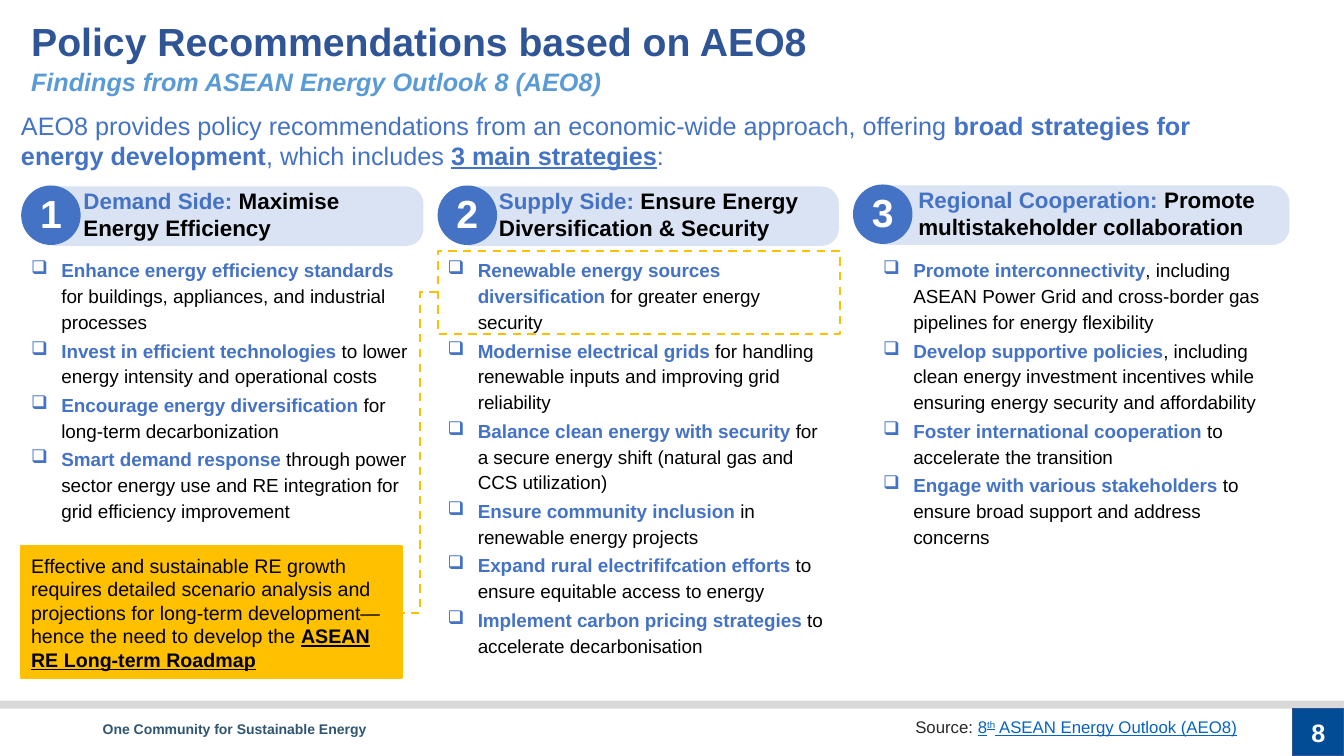
from lxml import etree
from pptx import Presentation
from pptx import util as u
from pptx.dml.color import RGBColor
from pptx.enum import dml, shapes, text
from pptx.oxml.ns import qn

EMU_PER_PX = 9144
COLORS = {
    "black": "000000", "white": "FFFFFF", "title": "2F5597", "subtitle": "5B9BD5",
    "blue": "4472C4", "pale": "DAE3F3", "gold": "FFC000", "gray": "D9D9D9",
    "navy": "024C96", "navy_edge": "325491", "motto": "2F5573",
    "source": "282828", "link": "0563C1",
}
STRATEGIES = [
    {"left": 21, "top": 184, "bar": (39, 381), "heading_box": (73, 340), "list_left": 21,
     "heading": ("Demand Side: ", "Maximise Energy Efficiency"),
     "actions": [
         ("Enhance energy efficiency standards ", "for buildings, appliances, and industrial processes"),
         ("Invest in efficient technologies ", "to lower energy intensity and operational costs"),
         ("Encourage energy diversification ", "for long-term decarbonization"),
         ("Smart demand response ",
          "through power sector energy use and RE integration for grid efficiency improvement"),
     ]},
    {"left": 434, "top": 184, "bar": (451, 381), "heading_box": (485, 381), "list_left": 434,
     "heading": ("Supply Side: ", "Ensure Energy Diversification & Security"),
     "actions": [
         ("Renewable energy sources diversification ", "for greater energy security"),
         ("Modernise electrical grids ", "for handling renewable inputs and improving grid reliability"),
         ("Balance clean energy with security ", "for a secure energy shift (natural gas and CCS utilization)"),
         ("Ensure community inclusion ", "in renewable energy projects"),
         ("Expand rural electrififcation efforts ", "to ensure equitable access to energy"),
         ("Implement carbon pricing strategies", " to accelerate decarbonisation"),
     ]},
    {"left": 846, "top": 183, "bar": (863, 416), "heading_box": (901, 381), "list_left": 866,
     "heading": ("Regional Cooperation: ", "Promote multistakeholder collaboration"),
     "actions": [
         ("Promote interconnectivity",
          ", including ASEAN Power Grid and cross-border gas pipelines for energy flexibility"),
         ("Develop supportive policies",
          ", including clean energy investment incentives while ensuring energy security and affordability"),
         ("Foster international cooperation ", "to accelerate the transition"),
         ("Engage with various stakeholders ", "to ensure broad support and address concerns"),
     ]},
]


def px(length):
    """Turn pixels into EMU."""
    return u.Emu(length * EMU_PER_PX)


def rgb(name):
    """Look up a named colour."""
    return RGBColor.from_string(COLORS[name])


def write(paragraph, content, size=18, color="black", bold=False, italic=False,
          underline=False, raised=False, align="LEFT"):
    """Add text, or (text, format) parts that vary the shared format."""
    paragraph.alignment = text.PP_ALIGN[align]
    parts = [(content, {})] if isinstance(content, str) else content
    for words, changes in parts:
        style = {"color": color, "bold": bold, "underline": underline, "raised": raised, **changes}
        run = paragraph.add_run()
        run.text = words
        font = run.font
        font.name, font.size, font.italic = "Arial", u.Pt(size), italic
        font.bold, font.underline = style["bold"], style["underline"]
        font.color.rgb = rgb(style["color"])
        if style["raised"]:
            run._r.get_or_add_rPr().set("baseline", "30000")


class Deck:
    """Hold the presentation, its style and the current slide."""

    def __init__(self, width, height):
        """Start a one-slide deck with a title-only layout."""
        self.file = Presentation()
        self.file.slide_width, self.file.slide_height = px(width), px(height)
        self.slide = self.file.slides.add_slide(self.file.slide_layouts[5])

    def title(self, box, content, **style):
        """Place and format the title placeholder."""
        heading = self.slide.shapes.title
        heading.left, heading.top, heading.width, heading.height = map(px, box)
        frame = heading.text_frame
        frame.auto_size = text.MSO_AUTO_SIZE.NONE
        frame.vertical_anchor = text.MSO_ANCHOR.TOP
        write(frame.paragraphs[0], content, **style)

    def shape(self, kind, box, fill=None, line=None, weight=1.5, dashed=False, radius=None):
        """Draw a preset shape."""
        item = self.slide.shapes.add_shape(shapes.MSO_SHAPE[kind], *map(px, box))
        item.shadow.inherit = False
        if radius is not None:
            item.adjustments[0] = radius
        if fill:
            item.fill.solid()
            item.fill.fore_color.rgb = rgb(fill)
        else:
            item.fill.background()
        if line:
            self.stroke(item.line, line, weight, dashed)
        else:
            item.line.fill.background()
        return item

    def stroke(self, line, color, weight, dashed):
        """Format a line."""
        line.color.rgb = rgb(color)
        line.width = u.Pt(weight)
        if dashed:
            line.dash_style = dml.MSO_LINE.DASH

    def panel(self, box, content, fill, line, weight=1.5, **style):
        """Draw a filled rectangle with vertically centred text."""
        frame = self.shape("RECTANGLE", box, fill, line, weight).text_frame
        frame.word_wrap = True
        frame.vertical_anchor = text.MSO_ANCHOR.MIDDLE
        write(frame.paragraphs[0], content, **style)

    def frame(self, box, wrap=True):
        """Add an empty text box and return its frame."""
        frame = self.slide.shapes.add_textbox(*map(px, box)).text_frame
        frame.word_wrap = wrap
        frame.auto_size = text.MSO_AUTO_SIZE.SHAPE_TO_FIT_TEXT
        return frame

    def label(self, box, content, wrap=True, **style):
        """Add a text box with one paragraph."""
        write(self.frame(box, wrap).paragraphs[0], content, **style)

    def checklist(self, box, actions):
        """Add a box-bulleted list with highlighted openings."""
        frame = self.frame(box)
        for index, (lead, detail) in enumerate(actions):
            paragraph = frame.add_paragraph() if index else frame.paragraphs[0]
            layout = paragraph._p.get_or_add_pPr()
            layout.set("marL", str(px(30)))
            layout.set("indent", str(-px(30)))
            etree.SubElement(layout, qn("a:buChar")).set("char", "❑")
            paragraph.line_spacing = 1.14
            paragraph.space_after = u.Pt(2)
            write(paragraph, [(lead, {"color": "blue", "bold": True}), (detail, {})], size=13.5)

    def elbow(self, start, end, color, weight=1.5):
        """Draw a dashed elbow connector."""
        link = self.slide.shapes.add_connector(
            shapes.MSO_CONNECTOR.ELBOW, *map(px, start + end))
        etree.SubElement(link._element.spPr, qn("a:effectLst"))
        self.stroke(link.line, color, weight, True)

    def strategy(self, number, left, top, bar, heading_box, list_left, heading, actions):
        """Draw one numbered strategy with its actions."""
        bar_left, bar_width = bar
        heading_left, heading_width = heading_box
        lead, rest = heading
        self.shape("ROUNDED_RECTANGLE", (bar_left, top + 1, bar_width, 59), "pale", radius=0.29)
        self.shape("OVAL", (left, top, 59, 59), "blue")
        self.label((left, top - 1, 59, 57), str(number), size=28, color="white",
                   bold=True, align="CENTER")
        self.label((heading_left, top - 3, heading_width, 64),
                   [(lead, {"color": "blue"}), (rest, {})], size=16, bold=True)
        self.checklist((list_left, 249, 399, 300), actions)


def main():
    """Build and save the slide."""
    deck = Deck(1333, 750)
    deck.shape("RECTANGLE", (0, 695, 1333, 8), "gray")
    deck.panel((1282, 703, 51, 47), "8", "navy", "navy_edge", 1,
               color="white", bold=True, align="CENTER")
    deck.label((92, 710, 282, 27), "One Community for Sustainable Energy",
               size=10, color="motto", bold=True)
    deck.title((21, 12, 1261, 57), "Policy Recommendations based on AEO8",
               size=28, color="title", bold=True)
    deck.label((21, 61, 591, 40), "Findings from ASEAN Energy Outlook 8 (AEO8)",
               wrap=False, color="subtitle", bold=True, italic=True)
    link = {"color": "link", "underline": True}
    deck.label((898, 706, 344, 30),
               [("Source: ", {}), ("8", link), ("th", {**link, "raised": True}),
                (" ASEAN Energy Outlook (AEO8)", link)],
               wrap=False, size=12, color="source")
    deck.label((11, 104, 1261, 71), [
        ("AEO8 provides policy recommendations from an economic-wide approach, offering ", {}),
        ("broad strategies for energy development", {"bold": True}),
        (", which includes ", {}),
        ("3 main strategies", {"bold": True, "underline": True}),
        (":", {})], color="blue")
    for number, strategy in enumerate(STRATEGIES, 1):
        deck.strategy(number, **strategy)
    deck.shape("RECTANGLE", (434, 249, 399, 82), line="gold", dashed=True)
    deck.panel((21, 542, 378, 131), [
        ("Effective and sustainable RE growth requires detailed scenario analysis and projections "
         "for long-term development—hence the need to develop the ", {}),
        ("ASEAN RE Long-term Roadmap", {"bold": True, "underline": True})],
        "gold", "gold", size=14)
    deck.elbow((434, 290), (400, 608), "gold")
    deck.file.save("out.pptx")


if __name__ == "__main__":
    main()
